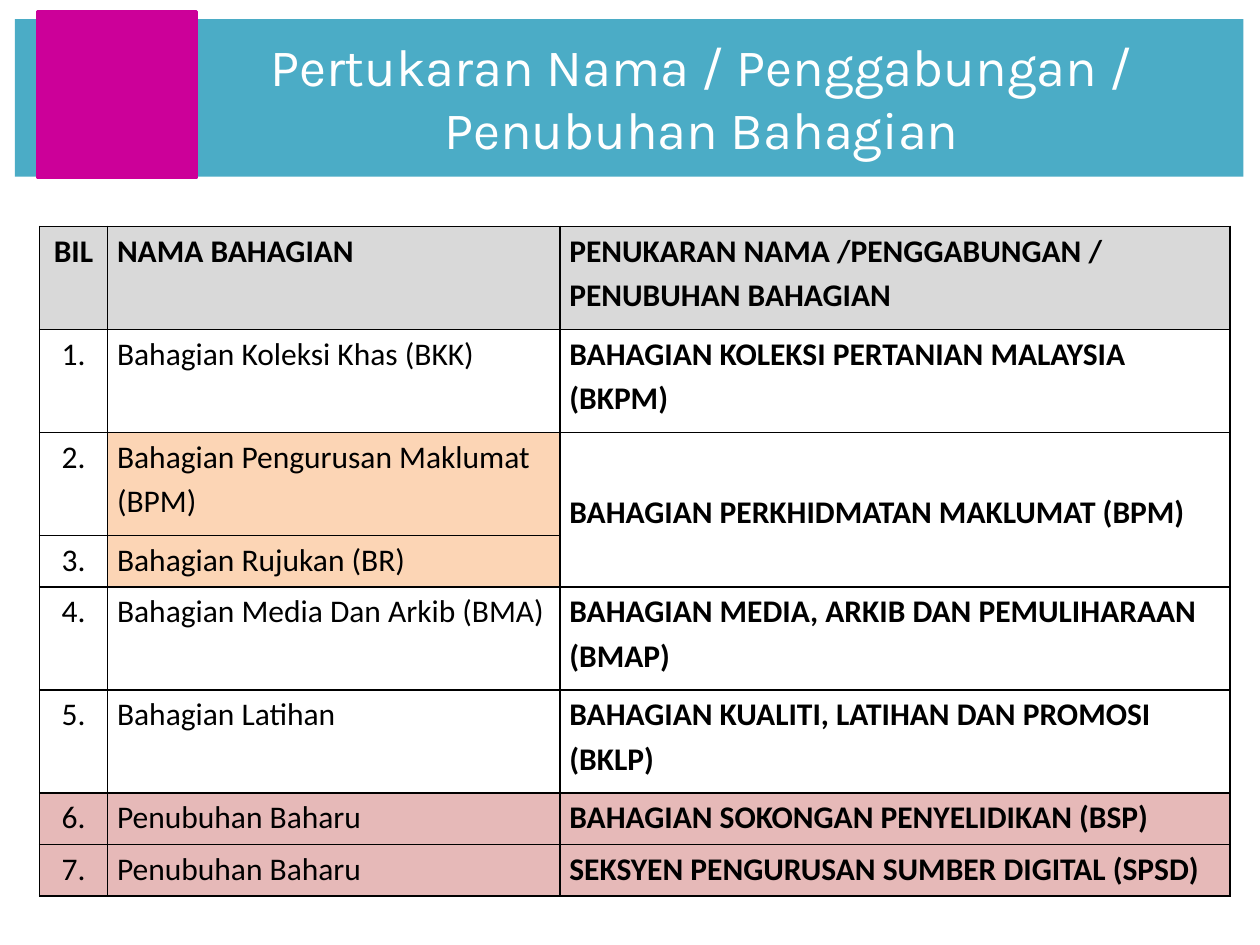
from lxml import etree
from pptx import Presentation
from pptx.dml.color import RGBColor
from pptx.enum.shapes import MSO_SHAPE
from pptx.enum.text import MSO_ANCHOR, PP_ALIGN
from pptx.oxml.ns import qn
from pptx.util import Pt

RECTANGLE = MSO_SHAPE.RECTANGLE
CENTER, LEFT = PP_ALIGN.CENTER, PP_ALIGN.LEFT
TOP, MIDDLE = MSO_ANCHOR.TOP, MSO_ANCHOR.MIDDLE

TITLE = "Pertukaran Nama / Penggabungan /\vPenubuhan Bahagian"
HEADER = ("BIL", "NAMA BAHAGIAN", "PENUKARAN NAMA /PENGGABUNGAN / PENUBUHAN BAHAGIAN")
DIVISIONS = [
    ("Bahagian Koleksi Khas (BKK)", "BAHAGIAN KOLEKSI PERTANIAN MALAYSIA (BKPM)", "plain"),
    ("Bahagian Pengurusan Maklumat (BPM)", "BAHAGIAN PERKHIDMATAN MAKLUMAT (BPM)", "merged"),
    ("Bahagian Rujukan (BR)", "", "merged"),
    ("Bahagian Media Dan Arkib (BMA)", "BAHAGIAN MEDIA, ARKIB DAN PEMULIHARAAN (BMAP)", "plain"),
    ("Bahagian Latihan", "BAHAGIAN KUALITI, LATIHAN DAN PROMOSI (BKLP)", "plain"),
    ("Penubuhan Baharu", "BAHAGIAN SOKONGAN PENYELIDIKAN (BSP)", "new"),
    ("Penubuhan Baharu", "SEKSYEN PENGURUSAN SUMBER DIGITAL (SPSD)", "new"),
]
COLUMN_WIDTHS = (38.9, 258.5, 383)
ROW_LINES = (2, 2, 2, 1, 2, 2, 1, 1)
LINE_HEIGHT = 29.45

THEME = {
    "banner": "4BACC6", "block": "CC0099", "title": "FFFFFF",
    "text": "000000", "border": "000000",
    "title_font": "Karla", "title_size": 30,
    "table_font": "Calibri", "table_size": 18,
}
ROW_FILLS = {
    "header": ("D9D9D9",) * 3,
    "plain": (None,) * 3,
    "merged": (None, "FCD5B5", None),
    "new": ("E6B9B8",) * 3,
}


def set_font(font, name, size, color, bold=False):
    font.name, font.size, font.bold = name, Pt(size), bold
    font.color.rgb = RGBColor.from_string(color)


def add_block(group, color, left, top, width, height, line_width=0):
    box = group.shapes.add_shape(RECTANGLE, Pt(left), Pt(top), Pt(width), Pt(height))
    box.shadow.inherit = False
    box.fill.solid()
    box.fill.fore_color.rgb = RGBColor.from_string(color)
    if line_width:
        box.line.color.rgb = RGBColor.from_string(color)
        box.line.width = Pt(line_width)
    else:
        box.line.fill.background()


def add_title(page):
    group = page.shapes.add_group_shape()
    add_block(group, THEME["banner"], 8.5, 11, 702, 90)
    add_block(group, THEME["block"], 21.5, 6.7, 91, 94.5, 2)
    box = group.shapes.add_textbox(Pt(51), Pt(16), Pt(700), Pt(80))
    box.text_frame.word_wrap = True
    para = box.text_frame.paragraphs[0]
    para.text = TITLE
    para.alignment = CENTER
    set_font(para.font, THEME["title_font"], THEME["title_size"], THEME["title"])


def add_borders(cell):
    properties = cell._tc.get_or_add_tcPr()
    for position, side in enumerate(("lnL", "lnR", "lnT", "lnB")):
        line = etree.Element(qn("a:" + side), w=str(Pt(1)))
        fill = etree.SubElement(line, qn("a:solidFill"))
        etree.SubElement(fill, qn("a:srgbClr"), val=THEME["border"])
        properties.insert(position, line)


def style_cell(cell, text, fill, alignment, bold):
    cell.margin_left = cell.margin_right = Pt(5.4)
    cell.margin_top = cell.margin_bottom = Pt(0)
    cell.vertical_anchor = TOP
    if fill:
        cell.fill.solid()
        cell.fill.fore_color.rgb = RGBColor.from_string(fill)
    else:
        cell.fill.background()
    add_borders(cell)
    para = cell.text_frame.paragraphs[0]
    para.text = text
    para.alignment = alignment
    para.line_spacing = 1.15
    para.space_before = para.space_after = Pt(6)
    set_font(para.font, THEME["table_font"], THEME["table_size"], THEME["text"], bold)


def add_division_table(page):
    rows = [(HEADER, "header")]
    for number, (name, change, kind) in enumerate(DIVISIONS, 1):
        rows.append(((f"{number}.", name, change), kind))
    frame = page.shapes.add_table(
        len(rows), len(COLUMN_WIDTHS), Pt(22.6), Pt(129.4),
        Pt(sum(COLUMN_WIDTHS)), Pt(sum(ROW_LINES) * LINE_HEIGHT))
    table = frame.table
    table.first_row = table.horz_banding = False
    for column, width in zip(table.columns, COLUMN_WIDTHS):
        column.width = Pt(width)
    for row_index, (texts, kind) in enumerate(rows):
        table.rows[row_index].height = Pt(ROW_LINES[row_index] * LINE_HEIGHT)
        for column_index, text in enumerate(texts):
            style_cell(
                table.cell(row_index, column_index), text,
                ROW_FILLS[kind][column_index],
                CENTER if column_index == 0 else LEFT,
                kind == "header" or column_index == 2)
    merged = [index for index, (texts, kind) in enumerate(rows) if kind == "merged"]
    shared = table.cell(merged[0], 2)
    shared.merge(table.cell(merged[-1], 2))
    shared.vertical_anchor = MIDDLE


def main():
    deck = Presentation()
    deck.slide_width, deck.slide_height = Pt(720), Pt(540)
    page = deck.slides.add_slide(deck.slide_layouts[6])
    add_title(page)
    add_division_table(page)
    deck.save("out.pptx")


if __name__ == "__main__":
    main()
